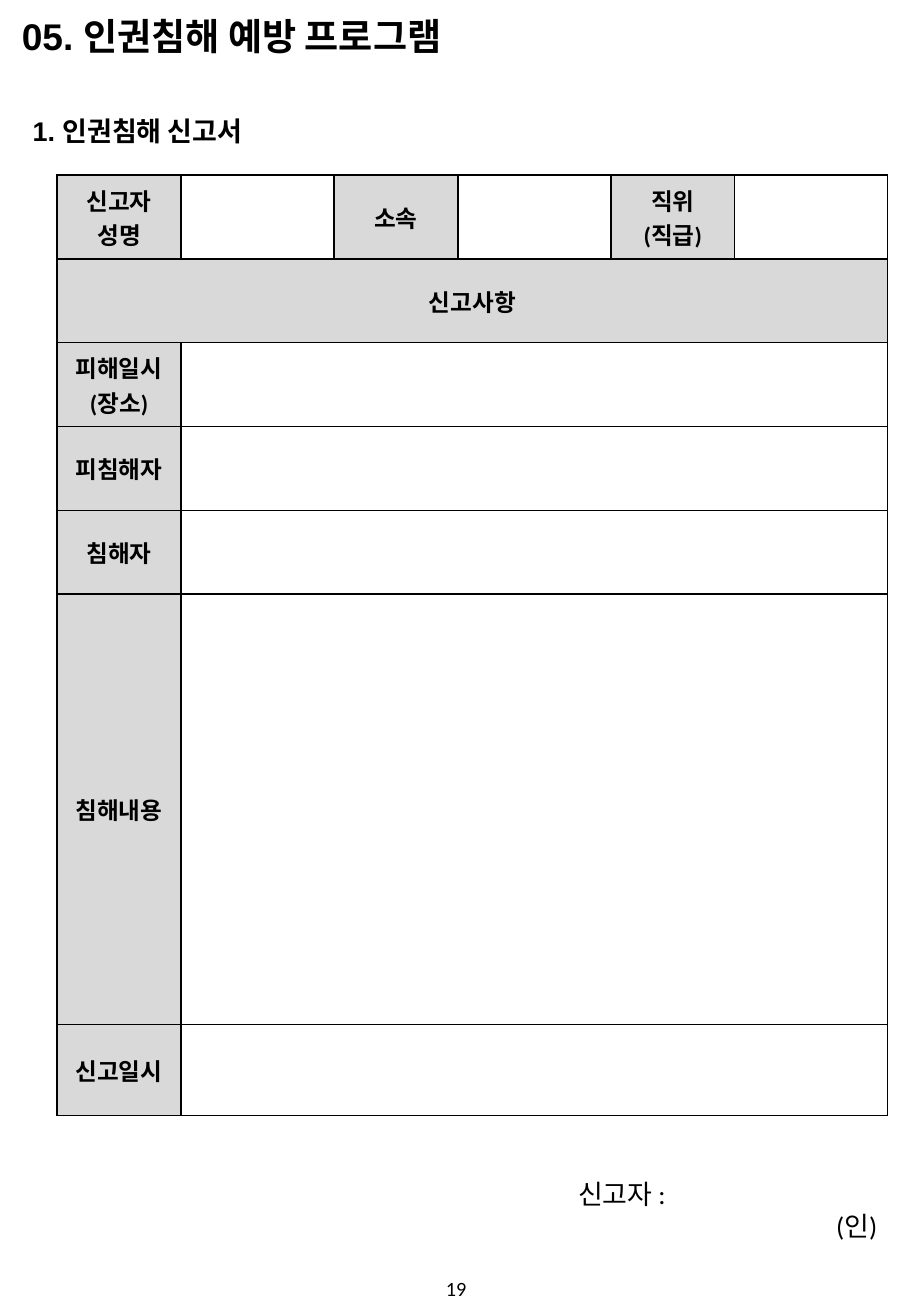
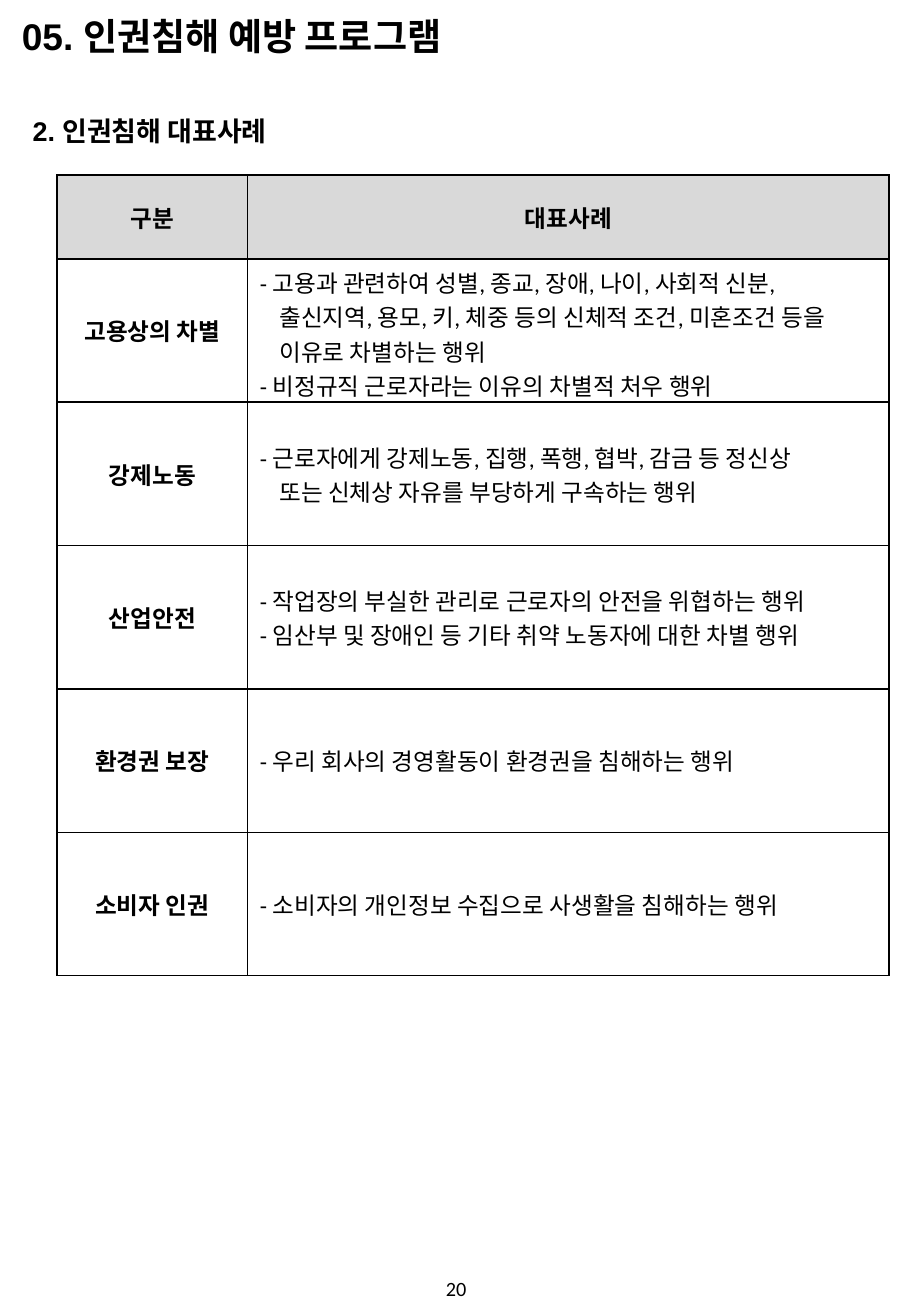
"""Builds the two human-rights form pages of the handbook."""
from dataclasses import dataclass, field

from lxml.etree import SubElement
from pptx import Presentation
from pptx.dml.color import RGBColor
from pptx.enum.text import MSO_ANCHOR as Anchor, MSO_AUTO_SIZE as AutoSize, PP_ALIGN as Align
from pptx.oxml.ns import qn
from pptx.util import Inches, Pt

COLORS = {"ink": "000000", "label": "D9D9D9"}
HEADING_FONT, BODY_FONT = "Arial", "Calibri"
CHAPTER = "05. 인권침해 예방 프로그램"
TABLE_LEFT, TABLE_TOP = 0.47, 1.44
CONTINUATION_INDENT = 0.16


@dataclass
class TextStyle:
    size: float
    font: str = BODY_FONT
    bold: bool = False
    align: Align = Align.LEFT


@dataclass
class Entry:
    text: str = ""
    shaded: bool = False
    style: TextStyle = field(default_factory=lambda: LABEL)
    span: int = 1


@dataclass
class Grid:
    widths: list[float]
    heights: list[float]
    rows: list[list[Entry]]


TITLE = TextStyle(22, HEADING_FONT, True)
SECTION = TextStyle(16, HEADING_FONT, True)
LABEL = TextStyle(14, bold=True, align=Align.CENTER)
CASE = TextStyle(14)
SIGNATURE = TextStyle(16)
PAGE_NUMBER = TextStyle(12, align=Align.CENTER)


def rgb(name: str) -> RGBColor:
    return RGBColor.from_string(COLORS[name])


def write(frame, text: str, style: TextStyle) -> None:
    frame.text = text
    for para in frame.paragraphs:
        para.alignment = style.align
        for span in para.runs:
            font = span.font
            font.size, font.name, font.bold = Pt(style.size), style.font, style.bold
            font.color.rgb = rgb("ink")


def fit_heading(box, place: tuple, text: str, style: TextStyle) -> None:
    box.left, box.top, box.width, box.height = map(Inches, place)
    write(box.text_frame, text, style)
    box.text_frame.word_wrap = False
    box.text_frame.auto_size = AutoSize.SHAPE_TO_FIT_TEXT
    box.text_frame.vertical_anchor = Anchor.TOP


def add_text(page, place: tuple, text: str, style: TextStyle):
    frame = page.shapes.add_textbox(*map(Inches, place)).text_frame
    frame.word_wrap = True
    write(frame, text, style)
    return frame


def draw_borders(cell) -> None:
    properties = cell._tc.get_or_add_tcPr()
    for side in ("a:lnL", "a:lnR", "a:lnT", "a:lnB"):
        line = SubElement(properties, qn(side), w=str(Pt(1)))
        SubElement(SubElement(line, qn("a:solidFill")), qn("a:srgbClr"), val=COLORS["ink"])


def fill_cell(cell, entry: Entry) -> None:
    if entry.shaded:
        cell.fill.solid()
        cell.fill.fore_color.rgb = rgb("label")
    cell.vertical_anchor = Anchor.MIDDLE
    if not entry.text:
        return
    write(cell.text_frame, entry.text, entry.style)
    if entry.style is CASE:
        for para in cell.text_frame.paragraphs:
            if not para.text.startswith("-"):
                para._p.get_or_add_pPr().set("indent", str(Inches(CONTINUATION_INDENT)))


def add_grid(page, grid: Grid) -> None:
    size = (TABLE_LEFT, TABLE_TOP, sum(grid.widths), sum(grid.heights))
    table = page.shapes.add_table(len(grid.heights), len(grid.widths), *map(Inches, size)).table
    table.first_row = table.horz_banding = False
    for column, width in zip(table.columns, grid.widths):
        column.width = Inches(width)
    for row, height in zip(table.rows, grid.heights):
        row.height = Inches(height)
    for cell in table.iter_cells():
        draw_borders(cell)
        cell.fill.background()
    for row_index, entries in enumerate(grid.rows):
        column_index = 0
        for entry in entries:
            cell = table.cell(row_index, column_index)
            column_index += entry.span
            if entry.span > 1:
                cell.merge(table.cell(row_index, column_index - 1))
            fill_cell(cell, entry)


def add_page(deck, number: int, section: str, section_width: float, grid: Grid):
    page = deck.slides.add_slide(deck.slide_layouts[5])
    fit_heading(page.shapes.title, (0.08, 0.06, 4.05, 0.47), CHAPTER, TITLE)
    section_box = page.shapes.add_textbox(0, 0, 0, 0)
    fit_heading(section_box, (0.17, 0.89, section_width, 0.37), section, SECTION)
    add_grid(page, grid)
    footer = add_text(page, (2.91, 10.48, 1.69, 0.24), str(number), PAGE_NUMBER)
    footer.vertical_anchor = Anchor.MIDDLE
    return page


def report_grid() -> Grid:
    people = ("신고자\n성명", "소속", "직위\n(직급)")
    details = ("피해일시\n(장소)", "피침해자", "침해자", "침해내용", "신고일시")
    rows = [
        [entry for text in people for entry in (Entry(text, True), Entry())],
        [Entry("신고사항", True, span=6)],
        *([Entry(text, True), Entry(span=5)] for text in details),
    ]
    return Grid([1.02, 1.26] * 3, [0.69] * 5 + [3.54, 0.75], rows)


def case_grid() -> Grid:
    cases = {
        "고용상의 차별": "- 고용과 관련하여 성별, 종교, 장애, 나이, 사회적 신분,\n"
                   "출신지역, 용모, 키, 체중 등의 신체적 조건, 미혼조건 등을\n"
                   "이유로 차별하는 행위\n"
                   "- 비정규직 근로자라는 이유의 차별적 처우 행위",
        "강제노동": "- 근로자에게 강제노동, 집행, 폭행, 협박, 감금 등 정신상\n"
                "또는 신체상 자유를 부당하게 구속하는 행위",
        "산업안전": "- 작업장의 부실한 관리로 근로자의 안전을 위협하는 행위\n"
                "- 임산부 및 장애인 등 기타 취약 노동자에 대한 차별 행위",
        "환경권 보장": "- 우리 회사의 경영활동이 환경권을 침해하는 행위",
        "소비자 인권": "- 소비자의 개인정보 수집으로 사생활을 침해하는 행위",
    }
    rows = [[Entry("구분", True), Entry("대표사례", True)]]
    rows += [[Entry(name), Entry(text, style=CASE)] for name, text in cases.items()]
    return Grid([1.57, 5.28], [0.69] + [1.18] * len(cases), rows)


def main() -> None:
    deck = Presentation()
    deck.slide_width, deck.slide_height = Inches(7.5), Inches(10.83)
    report = add_page(deck, 19, "1. 인권침해 신고서", 2.12, report_grid())
    signature = add_text(report, (4.24, 9.64, 3.08, 0.64), "신고자 :\n(인)", SIGNATURE)
    reporter, seal = signature.paragraphs
    reporter._p.get_or_add_pPr().set("marL", str(Inches(0.42)))
    seal.alignment = Align.RIGHT
    add_page(deck, 20, "2. 인권침해 대표사례", 2.34, case_grid())
    deck.save("out.pptx")


if __name__ == "__main__":
    main()
